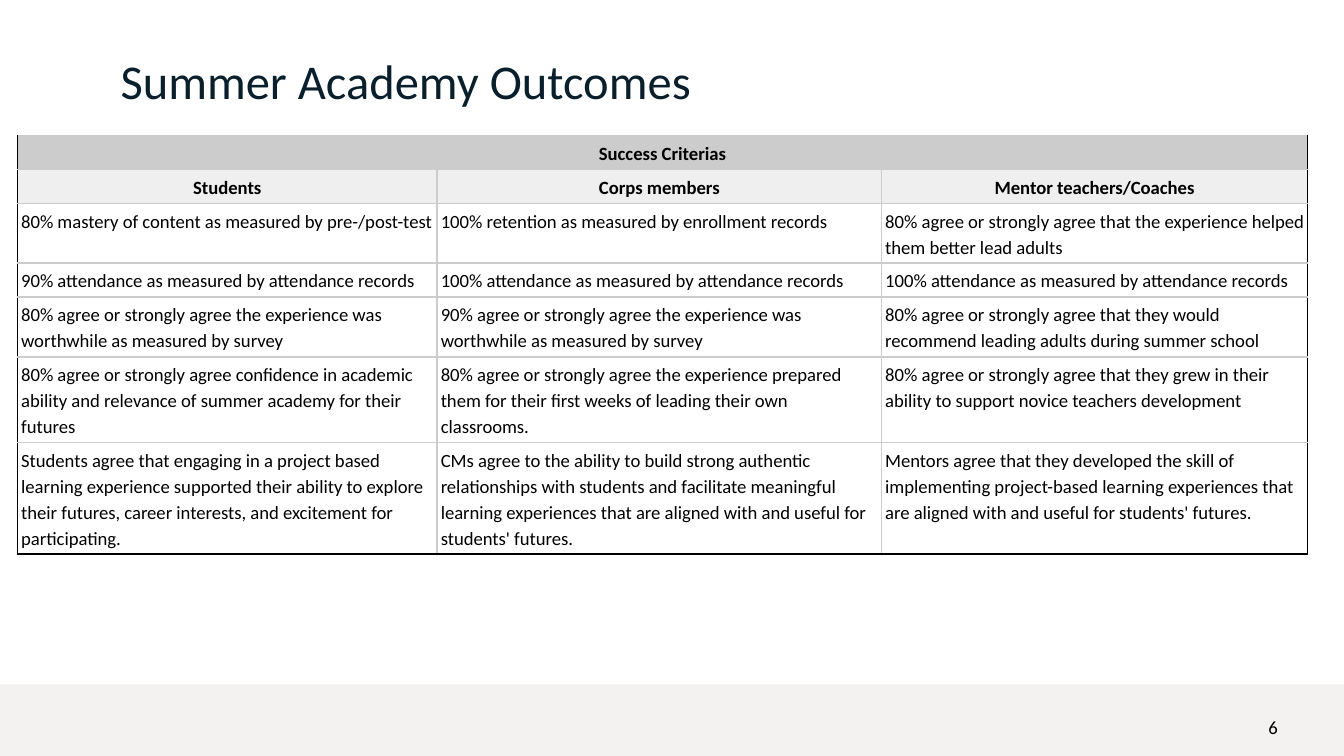
from dataclasses import dataclass

from lxml import etree
from pptx import Presentation
from pptx.dml.color import RGBColor
from pptx.enum.shapes import MSO_SHAPE
from pptx.enum.text import MSO_ANCHOR, PP_ALIGN
from pptx.oxml.ns import qn
from pptx.util import Cm, Pt

RECTANGLE = MSO_SHAPE.RECTANGLE
TOP, MIDDLE, BOTTOM = MSO_ANCHOR.TOP, MSO_ANCHOR.MIDDLE, MSO_ANCHOR.BOTTOM
LEFT, CENTER = PP_ALIGN.LEFT, PP_ALIGN.CENTER


@dataclass(frozen=True)
class Theme:
    font: str = "Calibri"
    title_size: int = 26
    text_size: int = 10
    title_color: str = "091F2C"
    text_color: str = "000000"
    footer_fill: str = "F3F2F1"
    banner_fill: str = "CCCCCC"
    header_fill: str = "EFEFEF"
    outer_line: str = "000000"
    inner_line: str = "CCCCCC"


THEME = Theme()

SLIDE_WIDTH, SLIDE_HEIGHT = 25.4, 14.28
COLUMN_WIDTHS = (7.93, 8.4, 8.05)
CELL_INSET = 0.07
LINE_HEIGHT = 0.49
ROW_PADDING = 0.15

BANNER = "Success Criterias"
HEADERS = ("Students", "Corps members", "Mentor teachers/Coaches")
# Number of text lines in each row, then its cells
CRITERIA = (
    (2, ("80% mastery of content as measured by pre-/post-test",
         "100% retention as measured by enrollment records",
         "80% agree or strongly agree that the experience helped them better lead adults")),
    (1, ("90% attendance as measured by attendance records",
         "100% attendance as measured by attendance records",
         "100% attendance as measured by attendance records")),
    (2, ("80% agree or strongly agree the experience was worthwhile as measured by survey",
         "90% agree or strongly agree the experience was worthwhile as measured by survey",
         "80% agree or strongly agree that they would recommend leading adults during "
         "summer school")),
    (3, ("80% agree or strongly agree confidence in academic ability and relevance of "
         "summer academy for their futures",
         "80% agree or strongly agree the experience prepared them for their first weeks "
         "of leading their own classrooms.",
         "80% agree or strongly agree that they grew in their ability to support novice "
         "teachers development")),
    (4, ("Students agree that engaging in a project based learning experience supported "
         "their ability to explore their futures, career interests, and excitement for "
         "participating.",
         "CMs agree to the ability to build strong authentic relationships with students "
         "and facilitate meaningful learning experiences that are aligned with and useful "
         "for students' futures.",
         "Mentors agree that they developed the skill of implementing project-based "
         "learning experiences that are aligned with and useful for students' futures.")),
)


def set_text(text_frame, text, size, color, bold=False):
    text_frame.text = text
    paragraph = text_frame.paragraphs[0]
    font = paragraph.runs[0].font
    font.name, font.size, font.bold = THEME.font, Pt(size), bold
    font.color.rgb = RGBColor.from_string(color)
    return paragraph


def add_label(slide, box, text, size, color, anchor):
    text_frame = slide.shapes.add_textbox(*map(Cm, box)).text_frame
    text_frame.word_wrap = True
    text_frame.vertical_anchor = anchor
    text_frame.margin_left = text_frame.margin_right = Cm(0.25)
    text_frame.margin_top = text_frame.margin_bottom = Cm(0.25)
    set_text(text_frame, text, size, color)


def add_footer(slide, box, number):
    """Place the band in the box and the slide number at its right end."""
    left, top, width, height = box
    band = slide.shapes.add_shape(RECTANGLE, *map(Cm, box))
    band.shadow.inherit = False
    band.fill.solid()
    band.fill.fore_color.rgb = RGBColor.from_string(THEME.footer_fill)
    band.line.fill.background()
    number_box = (left + width - 1.68, top + 0.25, 1.52, height - 0.25)
    add_label(slide, number_box, number, THEME.text_size, THEME.text_color, MIDDLE)


def set_borders(cell, outer_sides):
    """Draw all four borders, with the outer line on the named sides."""
    properties = cell._tc.get_or_add_tcPr()
    for side in "LRTB":
        color = THEME.outer_line if side in outer_sides else THEME.inner_line
        line = etree.SubElement(properties, qn(f"a:ln{side}"), w=str(Pt(1)))
        fill = etree.SubElement(line, qn("a:solidFill"))
        etree.SubElement(fill, qn("a:srgbClr"), val=color)


def format_cell(cell, text, outer_sides, fill=None):
    """Style a cell; a filled one is a heading."""
    set_borders(cell, outer_sides)
    if fill:
        cell.fill.solid()
        cell.fill.fore_color.rgb = RGBColor.from_string(fill)
    else:
        cell.fill.background()
    cell.margin_left = cell.margin_right = Cm(CELL_INSET)
    cell.margin_top = cell.margin_bottom = Cm(CELL_INSET)
    cell.vertical_anchor = BOTTOM if fill else TOP
    paragraph = set_text(cell.text_frame, text, THEME.text_size, THEME.text_color, bool(fill))
    paragraph.alignment = CENTER if fill else LEFT
    paragraph.line_spacing = 1.15


def add_criteria_table(slide, left, top):
    rows = [(1, HEADERS), *CRITERIA]
    heights = [ROW_PADDING + LINE_HEIGHT * lines for lines in (1, *(row[0] for row in rows))]
    box = (left, top, sum(COLUMN_WIDTHS), sum(heights))
    table = slide.shapes.add_table(len(heights), len(COLUMN_WIDTHS), *map(Cm, box)).table
    table.first_row = table.horz_banding = False
    for column, width in zip(table.columns, COLUMN_WIDTHS):
        column.width = Cm(width)
    for row, height in zip(table.rows, heights):
        row.height = Cm(height)

    last_row, last_column = len(heights) - 1, len(COLUMN_WIDTHS) - 1
    table.cell(0, 0).merge(table.cell(0, last_column))
    format_cell(table.cell(0, 0), BANNER, "LR", THEME.banner_fill)
    for row_index, (_, texts) in enumerate(rows, start=1):
        fill = THEME.header_fill if row_index == 1 else None
        for column_index, text in enumerate(texts):
            outer_sides = {0: "L", last_column: "R"}.get(column_index, "")
            if row_index == last_row:
                outer_sides += "B"
            format_cell(table.cell(row_index, column_index), text, outer_sides, fill)


def main():
    presentation = Presentation()
    presentation.slide_width, presentation.slide_height = Cm(SLIDE_WIDTH), Cm(SLIDE_HEIGHT)
    slide = presentation.slides.add_slide(presentation.slide_layouts[6])
    add_footer(slide, (0, 12.93, SLIDE_WIDTH, SLIDE_HEIGHT - 12.93), "6")
    add_label(slide, (2.03, 0.71, 21.36, 1.5), "Summer Academy Outcomes",
              THEME.title_size, THEME.title_color, TOP)
    add_criteria_table(slide, 0.33, 2.56)
    presentation.save("out.pptx")


if __name__ == "__main__":
    main()
